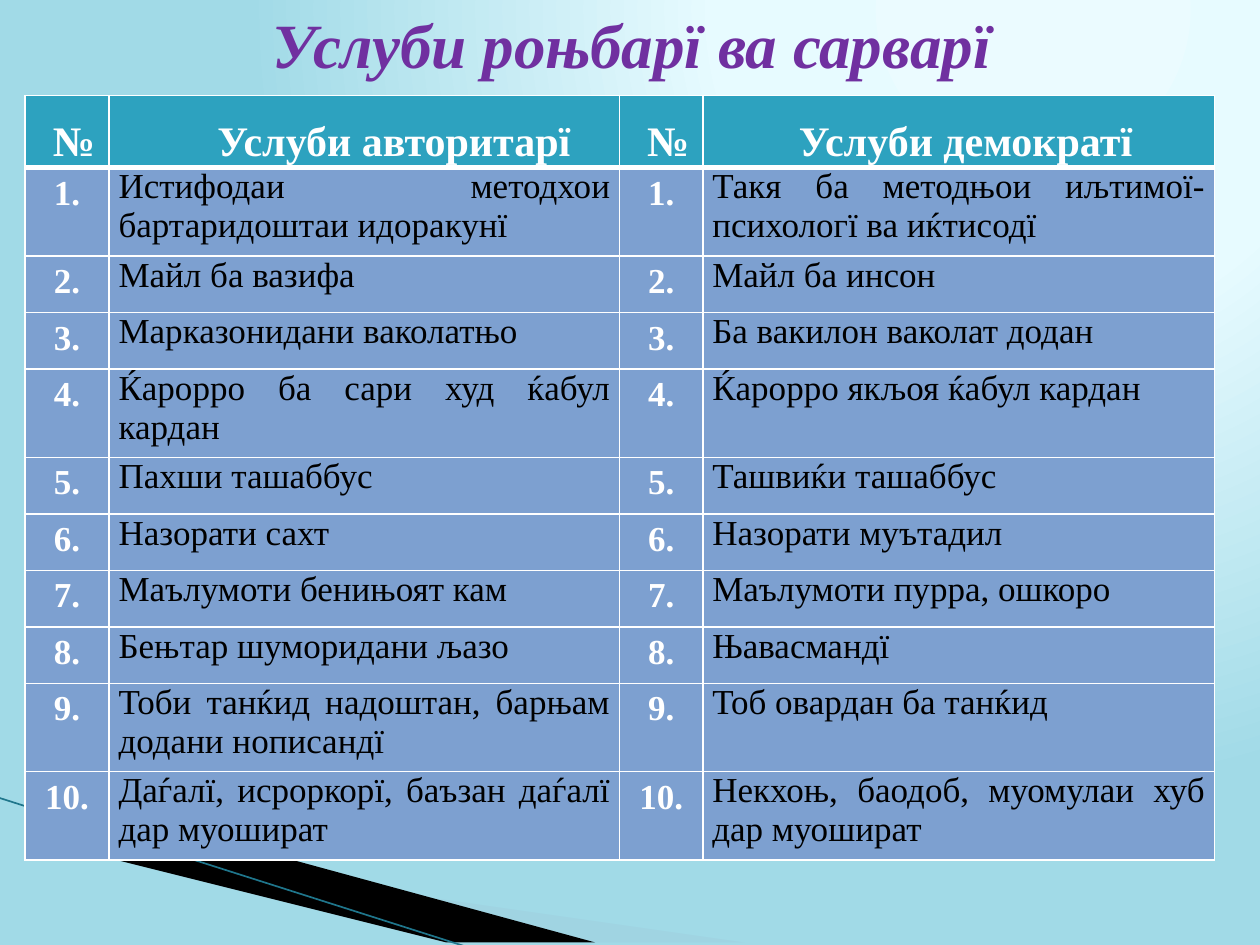
"""Builds a slide comparing authoritarian and democratic leadership styles."""
from lxml import etree
from pptx import Presentation
from pptx.dml.color import RGBColor
from pptx.enum.shapes import MSO_CONNECTOR
from pptx.enum.text import MSO_ANCHOR, PP_ALIGN
from pptx.oxml import parse_xml
from pptx.oxml.ns import nsdecls, qn
from pptx.util import Cm, Pt

CENTER, JUSTIFY = PP_ALIGN.CENTER, PP_ALIGN.JUSTIFY
MIDDLE = MSO_ANCHOR.MIDDLE
STRAIGHT = MSO_CONNECTOR.STRAIGHT

WHITE = RGBColor(0xFF, 0xFF, 0xFF)
BLACK = RGBColor(0, 0, 0)
PURPLE = RGBColor(0x70, 0x30, 0xA0)
TEAL = RGBColor(0x2D, 0xA2, 0xBF)
DARK_TEAL = RGBColor(0x1F, 0x76, 0x8C)
BLUE = RGBColor(0x7D, 0xA0, 0xD0)
PALE_BLUE = RGBColor(0xA0, 0xCB, 0xDC)
BACKGROUND = [(0, "EBFBFF"), (40, "E7FBFF"), (100, "A1DAE7")]
FONT = "Times New Roman"

TITLE = "Услуби роњбарї ва сарварї"
HEADER = ["№", "Услуби авторитарї", "№", "Услуби демократї"]
STYLES = [
    ("Истифодаи методхои бартаридоштаи идоракунї",
     "Такя ба методњои иљтимої-психологї ва иќтисодї"),
    ("Майл ба вазифа", "Майл ба инсон"),
    ("Марказонидани ваколатњо", "Ба вакилон ваколат додан"),
    ("Ќарорро ба сари худ ќабул кардан", "Ќарорро якљоя ќабул кардан"),
    ("Пахши ташаббус", "Ташвиќи ташаббус"),
    ("Назорати сахт", "Назорати муътадил"),
    ("Маълумоти бенињоят кам", "Маълумоти пурра, ошкоро"),
    ("Бењтар шуморидани љазо", "Њавасмандї"),
    ("Тоби танќид надоштан, барњам додани нописандї", "Тоб овардан ба танќид"),
    ("Даѓалї, исроркорї, баъзан даѓалї дар муошират",
     "Некхоњ, баодоб, муомулаи хуб дар муошират"),
]
COL_WIDTHS = [1.7, 10.29, 1.68, 10.31]
HEADER_HEIGHT, TALL_ROW, SHORT_ROW = 1.45, 1.78, 1.14
TWO_LINE_ROWS = {1, 4, 9, 10}
HEADER_MARGINS = [0, 0.91, 0, 0]
WEDGES = [
    ([(1.4, 16.54), (15.11, 19.08), (11.58, 19.08), (1.4, 16.51)], PALE_BLUE, 40),
    ([(1.35, 16.48), (11.61, 19.08), (9.45, 19.1), (1.37, 16.51)], BLACK, 100),
]


def paint_background(slide):
    fill = slide.background.fill
    fill.solid()
    stops = "".join(f'<a:gs pos="{pos * 1000}"><a:srgbClr val="{color}"/></a:gs>'
                    for pos, color in BACKGROUND)
    grad = parse_xml(
        f'<a:gradFill {nsdecls("a")} rotWithShape="1"><a:gsLst>{stops}</a:gsLst>'
        '<a:path path="circle"><a:fillToRect l="65000" t="0" r="0" b="98000"/></a:path>'
        '</a:gradFill>')
    solid = next(slide.background._cSld.iter(qn("a:solidFill")))
    solid.getparent().replace(solid, grad)


def add_wedge(slide, points, color, opacity):
    builder = slide.shapes.build_freeform(*points[0], scale=Cm(1))
    builder.add_line_segments(points[1:], close=True)
    sp = builder.convert_to_shape()
    sp.shadow.inherit = False
    sp.fill.solid()
    sp.fill.fore_color.rgb = color
    sp.line.fill.background()
    if opacity < 100:
        clr = next(sp._element.spPr.iter(qn("a:srgbClr")))
        etree.SubElement(clr, qn("a:alpha"), val=str(opacity * 1000))


def format_run(p, size, color, bold):
    font = p.runs[0].font
    font.name, font.size, font.bold = FONT, Pt(size), bold
    font.color.rgb = color
    return font


def set_borders(cell, top, bottom):
    tc_pr = cell._tc.get_or_add_tcPr()
    widths = [("L", 1), ("R", 1), ("T", top), ("B", bottom)]
    for i, (side, width) in enumerate(widths):
        tc_pr.insert(i, parse_xml(
            f'<a:ln{side} {nsdecls("a")} w="{Pt(width)}"><a:solidFill>'
            f'<a:srgbClr val="{WHITE}"/></a:solidFill></a:ln{side}>'))


def fill_cell(cell, text, row, col):
    is_header, is_number = row == 0, col % 2 == 0
    cell.fill.solid()
    cell.fill.fore_color.rgb = TEAL if is_header else BLUE
    set_borders(cell, 3 if row == 1 else 1, 3 if is_header else 1)
    if is_header or not is_number:
        cell.margin_left = cell.margin_right = Cm(0.19)
        cell.margin_top = cell.margin_bottom = 0
    p = cell.text_frame.paragraphs[0]
    p.text = text
    p.alignment = CENTER if is_header or is_number else JUSTIFY
    if is_header:
        p.line_spacing = 1.5
        p_pr = p._p.get_or_add_pPr()
        p_pr.set("marL", str(Cm(HEADER_MARGINS[col])))
        p_pr.set("indent", str(Cm(0.28)))
    strong = is_header or is_number
    format_run(p, 24 if is_header else 20, WHITE if strong else BLACK, strong)


def add_styles_table(slide):
    rows = [HEADER] + [[f"{n}.", left, f"{n}.", right]
                       for n, (left, right) in enumerate(STYLES, 1)]
    heights = [HEADER_HEIGHT] + [TALL_ROW if n in TWO_LINE_ROWS else SHORT_ROW
                                 for n in range(1, len(rows))]
    table = slide.shapes.add_table(
        len(rows), len(HEADER), Cm(0.5), Cm(1.93),
        Cm(sum(COL_WIDTHS)), Cm(sum(heights))).table
    table.horz_banding = False
    for column, width in zip(table.columns, COL_WIDTHS):
        column.width = Cm(width)
    for r, (texts, height) in enumerate(zip(rows, heights)):
        table.rows[r].height = Cm(height)
        for c, text in enumerate(texts):
            fill_cell(table.cell(r, c), text, r, c)


def add_title(slide):
    tf = slide.shapes.add_textbox(Cm(1.3), 0, Cm(22.86), Cm(1.73)).text_frame
    tf.word_wrap = True
    tf.vertical_anchor = MIDDLE
    tf.text = TITLE
    p = tf.paragraphs[0]
    p.alignment = CENTER
    format_run(p, 36, PURPLE, True).italic = True


def main():
    prs = Presentation()
    prs.slide_width, prs.slide_height = Cm(25.4), Cm(19.05)
    slide = prs.slides.add_slide(prs.slide_layouts[6])
    paint_background(slide)
    for points, color, opacity in WEDGES:
        add_wedge(slide, points, color, opacity)
    edge = slide.shapes.add_connector(STRAIGHT, Cm(-0.03), Cm(16.08), Cm(9.45), Cm(19.1))
    edge.line.color.rgb = DARK_TEAL
    edge.line.width = Pt(0.95)
    etree.SubElement(edge._element.spPr, qn("a:effectLst"))
    add_styles_table(slide)
    add_title(slide)
    prs.save("out.pptx")


if __name__ == "__main__":
    main()
